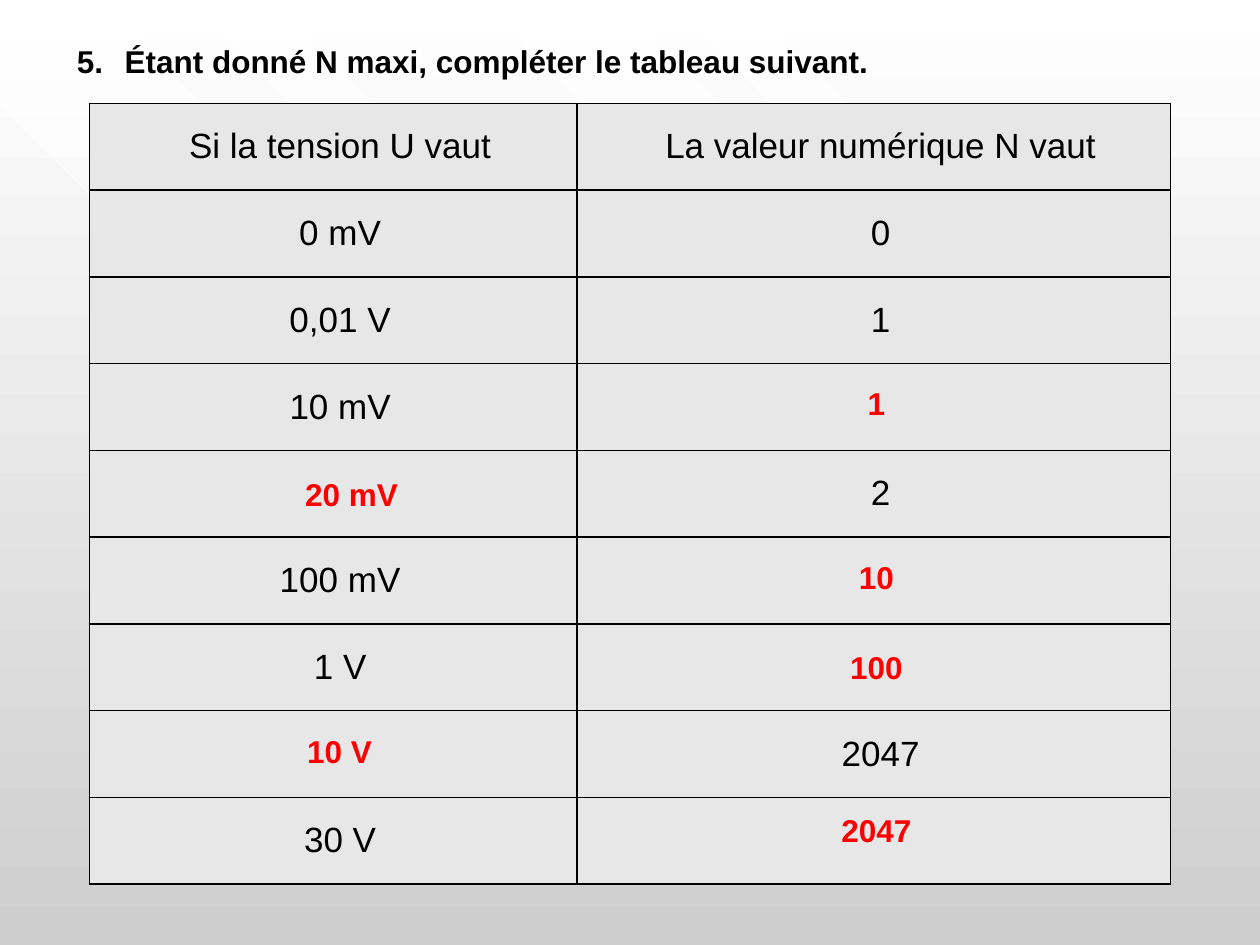
from lxml.etree import SubElement
from pptx import Presentation
from pptx.dml.color import RGBColor
from pptx.enum.text import MSO_ANCHOR as Anchor, PP_ALIGN as Align
from pptx.oxml.ns import qn
from pptx.util import Inches, Pt

COLORS = {"text": "000000", "answer": "FF0000", "cell": "E7E7E7",
          "band": "FFFFFF", "top": "FFFFFF", "bottom": "CECECE"}


def color(name):
    return RGBColor.from_string(COLORS[name])


def style_text(para, size, name, bold, align):
    para.alignment = align
    for span in para.runs:
        span.font.name = "Arial"
        span.font.size = Pt(size)
        span.font.bold = bold
        span.font.color.rgb = color(name)


deck = Presentation()
deck.slide_width, deck.slide_height = Inches(10), Inches(7.5)
page = deck.slides.add_slide(deck.slide_layouts[5])

# Background gradient, white at the top
backdrop = page.background.fill
backdrop.gradient()
backdrop.gradient_angle = 270
for stop, name, position in zip(backdrop.gradient_stops, ("top", "bottom"), (0, 1)):
    stop.color.rgb = color(name)
    stop.position = position

# Translucent diagonal bands, in hundredths of an inch
bands = [
    [(670, 593), (79, 0), (0, 0), (0, 84), (589, 675)],
    [(214, 0), (738, 527), (706, 559), (149, 0)],
    [(489, 0), (876, 389), (821, 444), (380, 0)],
    [(530, 0), (897, 368), (927, 338), (591, 0)],
]
for points in bands:
    outline = page.shapes.build_freeform(*points[0], scale=Inches(0.01))
    outline.add_line_segments(points[1:], close=True)
    band = outline.convert_to_shape()
    band.shadow.inherit = False
    band.line.fill.background()
    band.fill.solid()
    band.fill.fore_color.rgb = color("band")
    tint = band.element.spPr.find(qn("a:solidFill"))[0]
    SubElement(tint, qn("a:alpha"), val="50000")

# Table: blank cells are filled in by the answers below
rows = [
    ("Si la tension U vaut", "La valeur numérique N vaut"),
    ("0 mV", "0"),
    ("0,01 V", "1"),
    ("10 mV", ""),
    ("", "2"),
    ("100 mV", ""),
    ("1 V", ""),
    ("", "2047"),
    ("30 V", ""),
]
table_height = Inches(6.2)
frame = page.shapes.add_table(len(rows), 2, Inches(0.71), Inches(0.82),
                              Inches(8.58), table_height)
table = frame.table
table.first_row = table.horz_banding = False
for column, width in zip(table.columns, (3.87, 4.71)):
    column.width = Inches(width)
for row, texts in zip(table.rows, rows):
    row.height = table_height // len(rows)
    for cell, text in zip(row.cells, texts):
        cell.margin_left = cell.margin_right = Inches(0.05)
        cell.margin_top = cell.margin_bottom = 0
        cell.vertical_anchor = Anchor.MIDDLE
        para = cell.text_frame.paragraphs[0]
        para.text = text
        style_text(para, 20, "text", False, Align.CENTER)
        para.space_before = para.space_after = Pt(4)
        para._p.get_or_add_pPr().set("marL", str(Inches(0.11)))
        cell_format = cell._tc.get_or_add_tcPr()
        for side in ("lnL", "lnR", "lnT", "lnB"):
            border = SubElement(cell_format, qn(f"a:{side}"), w=str(Pt(1)))
            ink = SubElement(border, qn("a:solidFill"))
            SubElement(ink, qn("a:srgbClr"), val=COLORS["text"])
        cell.fill.solid()
        cell.fill.fore_color.rgb = color("cell")

# Numbered question in the title, brought in front of the bands
title = page.shapes.title
title.left, title.top = Inches(0.51), Inches(0.28)
title.width, title.height = Inches(7.17), Inches(0.4)
title.text_frame.text = "Étant donné N maxi, compléter le tableau suivant."
title.text_frame.vertical_anchor = Anchor.TOP
para = title.text_frame.paragraphs[0]
style_text(para, 18, "text", True, Align.JUSTIFY)
para.space_before, para.space_after = Pt(2.1), Pt(6)
numbering = para._p.get_or_add_pPr()
numbering.set("marL", str(Inches(0.38)))
numbering.set("indent", str(-Inches(0.38)))
SubElement(numbering, qn("a:buFont"), typeface="+mj-lt")
SubElement(numbering, qn("a:buAutoNum"), type="arabicPeriod", startAt="5")
page.shapes._spTree.append(title.element)

# Answers laid over the blank cells: text, left, top, width
answers = [
    ("1", 6.5, 3, 0.91),
    ("20 mV", 2.24, 3.72, 1.1),
    ("10", 6.5, 4.38, 0.91),
    ("100", 6.5, 5.09, 0.91),
    ("10 V", 2.24, 5.76, 0.91),
    ("2047", 6.5, 6.39, 0.91),
]
for text, left, top, width in answers:
    box = page.shapes.add_textbox(Inches(left), Inches(top), Inches(width), Inches(0.4))
    box.text_frame.word_wrap = True
    box.text_frame.text = text
    para = box.text_frame.paragraphs[0]
    style_text(para, 18, "answer", True, Align.CENTER)
    para.space_before = Pt(2.1)

deck.save("out.pptx")
